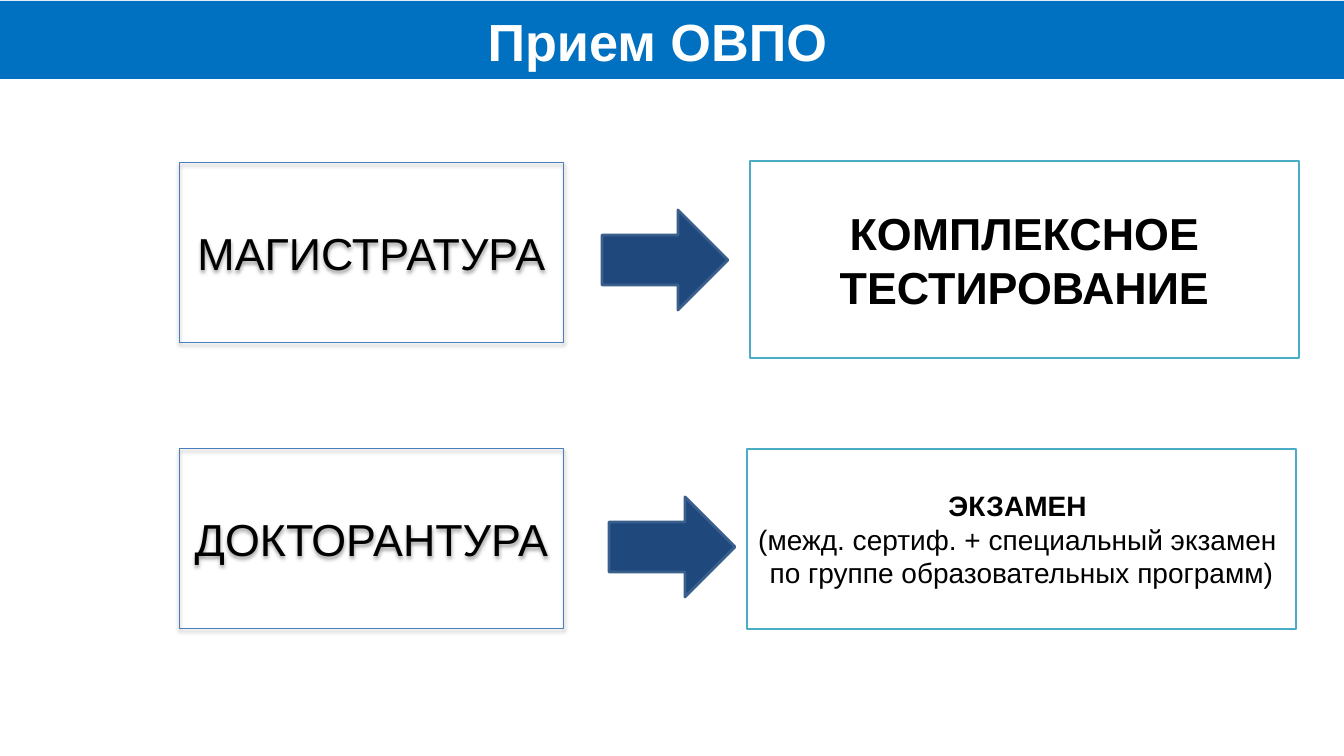
from lxml import etree
from pptx import Presentation
from pptx.dml.color import RGBColor
from pptx.enum.shapes import MSO_SHAPE
from pptx.enum.text import MSO_ANCHOR, MSO_AUTO_SIZE, PP_ALIGN
from pptx.oxml.ns import qn
from pptx.util import Emu, Pt

RECT, ARROW = MSO_SHAPE.RECTANGLE, MSO_SHAPE.RIGHT_ARROW
TOP, MIDDLE, CENTER = MSO_ANCHOR.TOP, MSO_ANCHOR.MIDDLE, PP_ALIGN.CENTER
FIT_SHAPE = MSO_AUTO_SIZE.SHAPE_TO_FIT_TEXT

WHITE = RGBColor(0xFF, 0xFF, 0xFF)
BLACK = RGBColor(0x00, 0x00, 0x00)
BLUE = RGBColor(0x00, 0x70, 0xC0)
LEVEL_LINE = RGBColor(0x4B, 0x7E, 0xBC)
TEST_LINE = RGBColor(0x4B, 0xAC, 0xC6)
NAVY = RGBColor(0x1F, 0x49, 0x7D)
ARROW_LINE = RGBColor(0x3A, 0x5F, 0x8C)
EMU_PER_PX = 12192000 / 1344


def px(*values):
    return [Emu(round(v * EMU_PER_PX)) for v in values]


def add_shape(s, kind, box, fill=None, line=None, width=1):
    sp = s.shapes.add_shape(kind, *px(*box))
    sp.shadow.inherit = False
    if fill is None:
        sp.fill.background()
    else:
        sp.fill.solid()
        sp.fill.fore_color.rgb = fill
    if line is None:
        sp.line.fill.background()
    else:
        sp.line.color.rgb = line
        sp.line.width = Pt(width)
    return sp


def add_shadow(sp):
    effects = sp._element.spPr.find(qn("a:effectLst"))
    shadow = etree.SubElement(effects, qn("a:outerShdw"), blurRad=str(Pt(3.1)),
                              dist=str(Pt(1.6)), dir="5400000", rotWithShape="0")
    color = etree.SubElement(shadow, qn("a:srgbClr"), val=str(BLACK))
    etree.SubElement(color, qn("a:alpha"), val="38000")


def set_text(sp, lines, size, color=BLACK, anchor=MIDDLE):
    tf = sp.text_frame
    tf.word_wrap = True
    tf.vertical_anchor = anchor
    tf.margin_left, tf.margin_right, tf.margin_top, tf.margin_bottom = px(11, 11, 6, 6)
    tf.text = "\n".join(text for text, bold in lines)
    for p, (text, bold) in zip(tf.paragraphs, lines):
        p.alignment = CENTER
        font = p.runs[0].font
        font.name = "Arial"
        font.size = Pt(size)
        font.bold = bold
        font.color.rgb = color


def add_title(s, text):
    add_shape(s, RECT, (0, 1, 1344, 78), BLUE)
    sp = s.shapes.add_textbox(*px(77, 3, 1161, 75))
    set_text(sp, [(text, True)], 37.3, WHITE, TOP)
    sp.text_frame.auto_size = FIT_SHAPE


def add_level(s, top, text):
    sp = add_shape(s, RECT, (179, top, 385, 180), line=LEVEL_LINE, width=0.75)
    add_shadow(sp)
    set_text(sp, [(text, False)], 32)


def add_test(s, box, lines, size):
    sp = add_shape(s, RECT, box, WHITE, TEST_LINE, 1.75)
    set_text(sp, lines, size)


def add_arrow(s, left, top):
    add_shape(s, ARROW, (left, top, 126, 100), NAVY, ARROW_LINE, 2)


def main():
    prs = Presentation()
    prs.slide_width, prs.slide_height = px(1344, 756)
    s = prs.slides.add_slide(prs.slide_layouts[6])
    add_title(s, "Прием ОВПО")
    add_level(s, 163, "МАГИСТРАТУРА")
    add_test(s, (750, 161, 549, 197), [("КОМПЛЕКСНОЕ ТЕСТИРОВАНИЕ", True)], 32)
    add_level(s, 449, "ДОКТОРАНТУРА")
    add_test(s, (747, 449, 549, 180), [
        ("ЭКЗАМЕН ", True),
        ("(межд. сертиф. + специальный экзамен ", False),
        ("по группе образовательных программ)", False),
    ], 20)
    add_arrow(s, 602, 210)
    add_arrow(s, 609, 497)
    prs.save("out.pptx")


if __name__ == "__main__":
    main()
